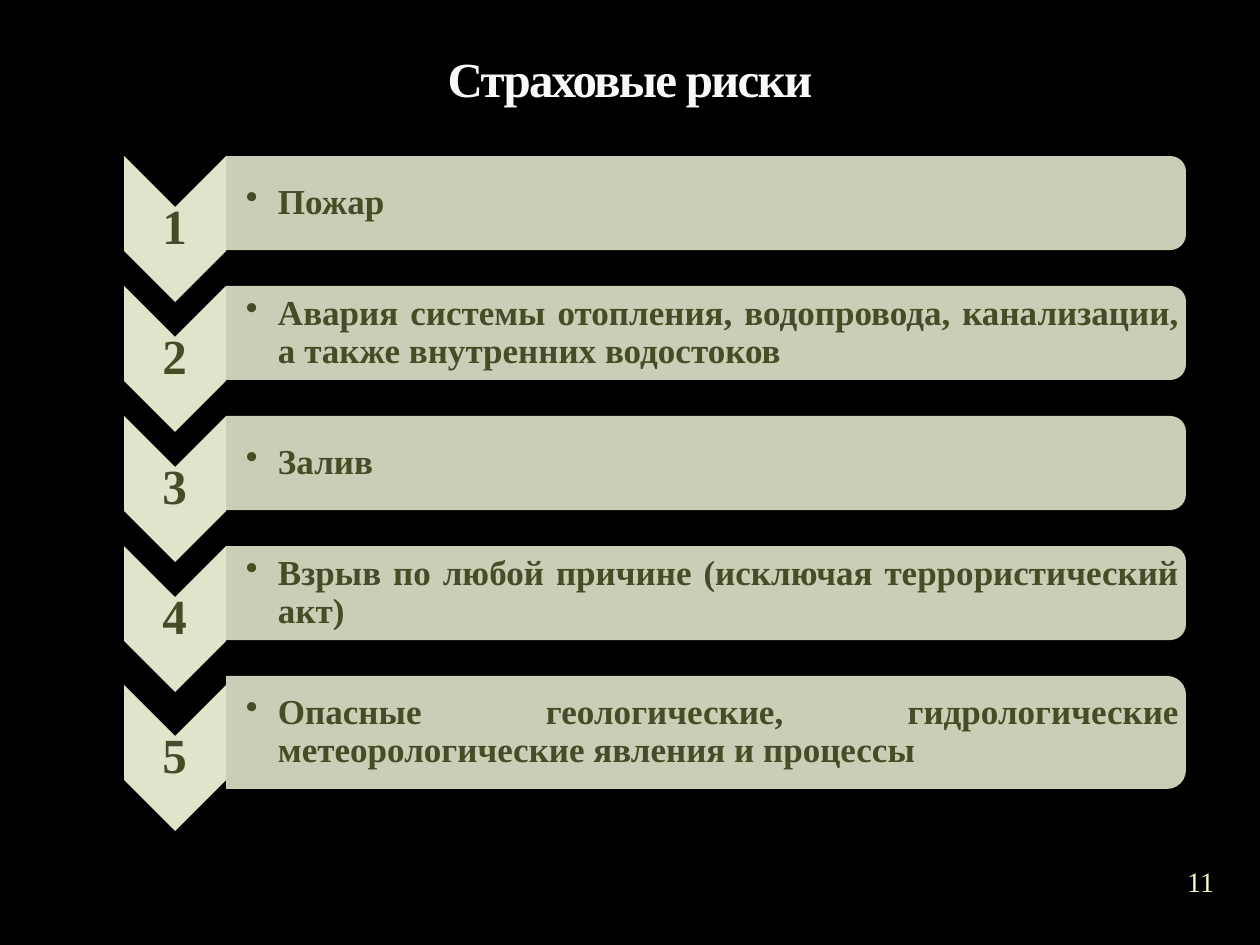
from dataclasses import dataclass

from lxml import etree
from pptx import Presentation
from pptx.dml.color import RGBColor
from pptx.enum.shapes import MSO_SHAPE
from pptx.enum.text import MSO_ANCHOR, PP_ALIGN
from pptx.oxml.ns import qn
from pptx.util import Pt

PX = 914400 / 126
CHEVRON, BAR = MSO_SHAPE.CHEVRON, MSO_SHAPE.ROUND_2_SAME_RECTANGLE
LEFT, CENTER, JUSTIFY = PP_ALIGN.LEFT, PP_ALIGN.CENTER, PP_ALIGN.JUSTIFY
MIDDLE, BOTTOM = MSO_ANCHOR.MIDDLE, MSO_ANCHOR.BOTTOM

FONT = "Times New Roman"
BACKGROUND, TITLE_COLOR, NUMBER_COLOR = "000000", "F9F9F9", "FEFAC9"
PALE_GREEN, DARK_GREEN = "DFE5CA", "444D26"

CHEVRON_LEFT, CHEVRON_WIDTH, CHEVRON_HEIGHT = 124, 102, 146
BAR_LEFT, BAR_WIDTH = CHEVRON_LEFT + CHEVRON_WIDTH, 960
FIRST_TOP, ROW_STEP, BAR_HEIGHT = 156, 130, 94
BULLET_INDENT = 32


@dataclass
class Box:
    left: int
    top: int
    width: int
    height: int

    def emu(self) -> list[int]:
        return [px(v) for v in (self.left, self.top, self.width, self.height)]


@dataclass
class Risk:
    text: str
    align: PP_ALIGN = JUSTIFY
    bar_height: int = BAR_HEIGHT
    chevron_drop: int = 0


RISKS = [
    Risk("Пожар", LEFT),
    Risk("Авария системы отопления, водопровода, канализации, а также внутренних водостоков"),
    Risk("Залив", LEFT),
    Risk("Взрыв по любой причине (исключая террористический акт)"),
    Risk("Опасные геологические, гидрологические метеорологические явления и процессы",
         bar_height=113, chevron_drop=9),
]


def px(length: float) -> int:
    return round(length * PX)


def rgb(color: str) -> RGBColor:
    return RGBColor.from_string(color)


def style_font(paragraph, size: int, color: str, bold: bool = True) -> None:
    font = paragraph.font
    font.name, font.size, font.bold = FONT, Pt(size), bold
    font.color.rgb = rgb(color)


def add_turned_shape(slide, preset, box: Box, opacity: int = 100) -> None:
    """Draw a preset turned a quarter clockwise so that it covers the box."""
    left = box.left + (box.width - box.height) / 2
    top = box.top + (box.height - box.width) / 2
    shape = slide.shapes.add_shape(preset, px(left), px(top), px(box.height), px(box.width))
    shape.rotation = 90
    shape.shadow.inherit = False
    shape.fill.solid()
    shape.fill.fore_color.rgb = rgb(PALE_GREEN)
    shape.line.fill.background()
    if opacity < 100:
        fill_color = shape.fill._xPr.find(qn("a:solidFill"))[0]
        etree.SubElement(fill_color, qn("a:alpha"), val=str(opacity * 1000))


def add_label(slide, box: Box, text: str, align: PP_ALIGN, left_inset: int = 0):
    frame = slide.shapes.add_textbox(*box.emu()).text_frame
    frame.word_wrap = True
    frame.vertical_anchor = MIDDLE
    frame.margin_left = px(left_inset)
    frame.margin_right = frame.margin_top = frame.margin_bottom = px(1)
    paragraph = frame.paragraphs[0]
    paragraph.text = text
    paragraph.alignment = align
    paragraph.line_spacing = 0.9
    return paragraph


def add_bullet(paragraph) -> None:
    properties = paragraph._p.get_or_add_pPr()
    properties.set("marL", str(px(BULLET_INDENT)))
    properties.set("indent", str(-px(BULLET_INDENT)))
    etree.SubElement(properties, qn("a:buChar"), char="•")


def add_risk(slide, number: int, risk: Risk) -> None:
    top = FIRST_TOP + (number - 1) * ROW_STEP
    chevron_top = top + risk.chevron_drop
    add_turned_shape(slide, CHEVRON,
                     Box(CHEVRON_LEFT, chevron_top, CHEVRON_WIDTH, CHEVRON_HEIGHT))
    digit = add_label(slide, Box(CHEVRON_LEFT, chevron_top + 51, CHEVRON_WIDTH, 44),
                      str(number), CENTER)
    style_font(digit, 28, DARK_GREEN)

    add_turned_shape(slide, BAR, Box(BAR_LEFT, top, BAR_WIDTH, risk.bar_height), opacity=90)
    description = add_label(slide, Box(BAR_LEFT, top + 4, BAR_WIDTH - 6, risk.bar_height - 8),
                            risk.text, risk.align, left_inset=20)
    add_bullet(description)
    style_font(description, 20, DARK_GREEN)


def add_title(slide, text: str) -> None:
    title = slide.shapes.title
    title.left, title.top, title.width, title.height = Box(63, 45, 1134, 69).emu()
    title.text_frame.text = text
    title.text_frame.vertical_anchor = BOTTOM
    paragraph = title.text_frame.paragraphs[0]
    paragraph.alignment = CENTER
    style_font(paragraph, 28, TITLE_COLOR)
    paragraph.runs[0].font._element.set("spc", "-100")


def main() -> None:
    deck = Presentation()
    deck.slide_width, deck.slide_height = px(1260), px(945)
    slide = deck.slides.add_slide(deck.slide_layouts[5])
    slide.background.fill.solid()
    slide.background.fill.fore_color.rgb = rgb(BACKGROUND)

    add_title(slide, "Страховые риски")
    for number, risk in enumerate(RISKS, start=1):
        add_risk(slide, number, risk)
    page_number = add_label(slide, Box(1159, 852, 84, 63), "11", CENTER)
    style_font(page_number, 16, NUMBER_COLOR, bold=False)

    deck.save("out.pptx")


if __name__ == "__main__":
    main()
